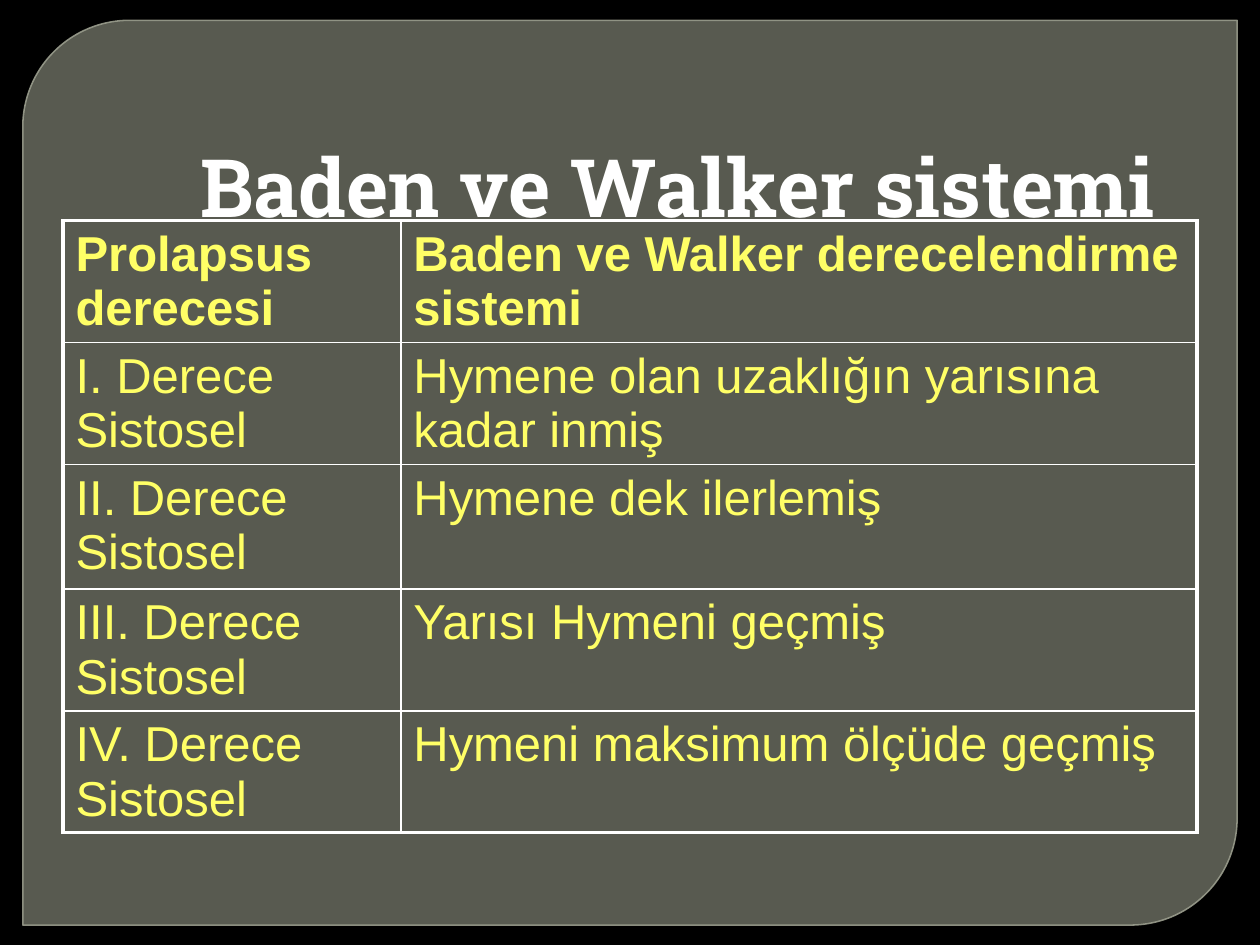
from lxml.etree import SubElement as Sub
from pptx import Presentation
from pptx.dml.color import RGBColor
from pptx.enum.shapes import MSO_SHAPE as Shape
from pptx.enum.text import MSO_ANCHOR as Anchor, MSO_AUTO_SIZE as Fit, PP_ALIGN as Align
from pptx.oxml.ns import qn
from pptx.util import Cm, Pt

# Content
TITLE = "Baden ve Walker sistemi "
ROWS = [
    ("Prolapsus derecesi", "Baden ve Walker derecelendirme sistemi"),
    ("I. Derece Sistosel", "Hymene olan uzaklığın yarısına kadar inmiş"),
    ("II. Derece Sistosel", "Hymene dek ilerlemiş"),
    ("III. Derece Sistosel", "Yarısı Hymeni geçmiş"),
    ("IV. Derece Sistosel", "Hymeni maksimum ölçüde geçmiş"),
]
WIDTHS = [6.81, 16.05]
HEIGHTS = [2.44, 2.44, 2.51, 2.44, 2.41]

# Colours and line widths
BLACK = RGBColor(0x00, 0x00, 0x00)
WHITE = RGBColor(0xFF, 0xFF, 0xFF)
YELLOW = RGBColor(0xFF, 0xFF, 0x66)
OLIVE = RGBColor(0x88, 0x8B, 0x7B)
EDGE = RGBColor(0x9D, 0xA0, 0x90)
THICK, THIN = Pt(2.25), Pt(1)


def write(frame, text, font="Arial", size=28, color=YELLOW, bold=False, align=Align.LEFT):
    frame.word_wrap = True
    para = frame.paragraphs[0]
    para.alignment = align
    run = para.add_run()
    run.text = text
    run.font.name = font
    run.font.size = Pt(size)
    run.font.bold = bold
    run.font.color.rgb = color


def fade(part, percent):
    """Set the opacity of a solid fill."""
    color = next(part.iter(qn("a:srgbClr")))
    Sub(color, qn("a:alpha"), val=str(percent * 1000))


def border(cell, sides):
    props = cell._tc.get_or_add_tcPr()
    for at, (side, width) in enumerate(sides.items()):
        line = props.makeelement(qn(f"a:ln{side}"), {"w": str(width)})
        fill = Sub(line, qn("a:solidFill"))
        Sub(fill, qn("a:srgbClr"), val=str(WHITE))
        props.insert(at, line)


deck = Presentation()
deck.slide_width, deck.slide_height = Cm(25.4), Cm(19.05)
slide = deck.slides.add_slide(deck.slide_layouts[5])
slide.background.fill.solid()
slide.background.fill.fore_color.rgb = BLACK

# Panel behind everything
panel = slide.shapes.add_shape(
    Shape.ROUND_2_DIAG_RECTANGLE, Cm(0.46), Cm(0.41), Cm(24.48), Cm(18.24))
panel.adjustments[0] = 0.118
panel.shadow.inherit = False
panel.fill.solid()
panel.fill.fore_color.rgb = OLIVE
panel.line.color.rgb = EDGE
panel.line.width = Pt(0.87)
props = panel._element.spPr
fade(props.find(qn("a:solidFill")), 65)
fade(props.find(qn("a:ln")), 88)
slide.shapes._spTree.insert(2, panel._element)

# Title
title = slide.shapes.title
title.left, title.top, title.width, title.height = Cm(2.97), Cm(0.84), Cm(20.96), Cm(3.99)
title.text_frame.auto_size = Fit.NONE
title.text_frame.vertical_anchor = Anchor.BOTTOM
write(title.text_frame, TITLE, font="Roboto Slab", size=46, color=WHITE,
      bold=True, align=Align.RIGHT)

# Table with a thick frame and thin inner lines
table = slide.shapes.add_table(
    len(ROWS), len(WIDTHS), Cm(1.27), Cm(4.45), Cm(sum(WIDTHS)), Cm(sum(HEIGHTS))).table
for col, width in zip(table.columns, WIDTHS):
    col.width = Cm(width)
for row, height in zip(table.rows, HEIGHTS):
    row.height = Cm(height)
for r, row in enumerate(ROWS):
    for c, text in enumerate(row):
        cell = table.cell(r, c)
        cell.fill.background()
        write(cell.text_frame, text, bold=r == 0)
        outer = {"L": c == 0, "R": c == len(WIDTHS) - 1,
                 "T": r == 0, "B": r == len(ROWS) - 1}
        border(cell, {side: THICK if out else THIN for side, out in outer.items()})

deck.save("out.pptx")
